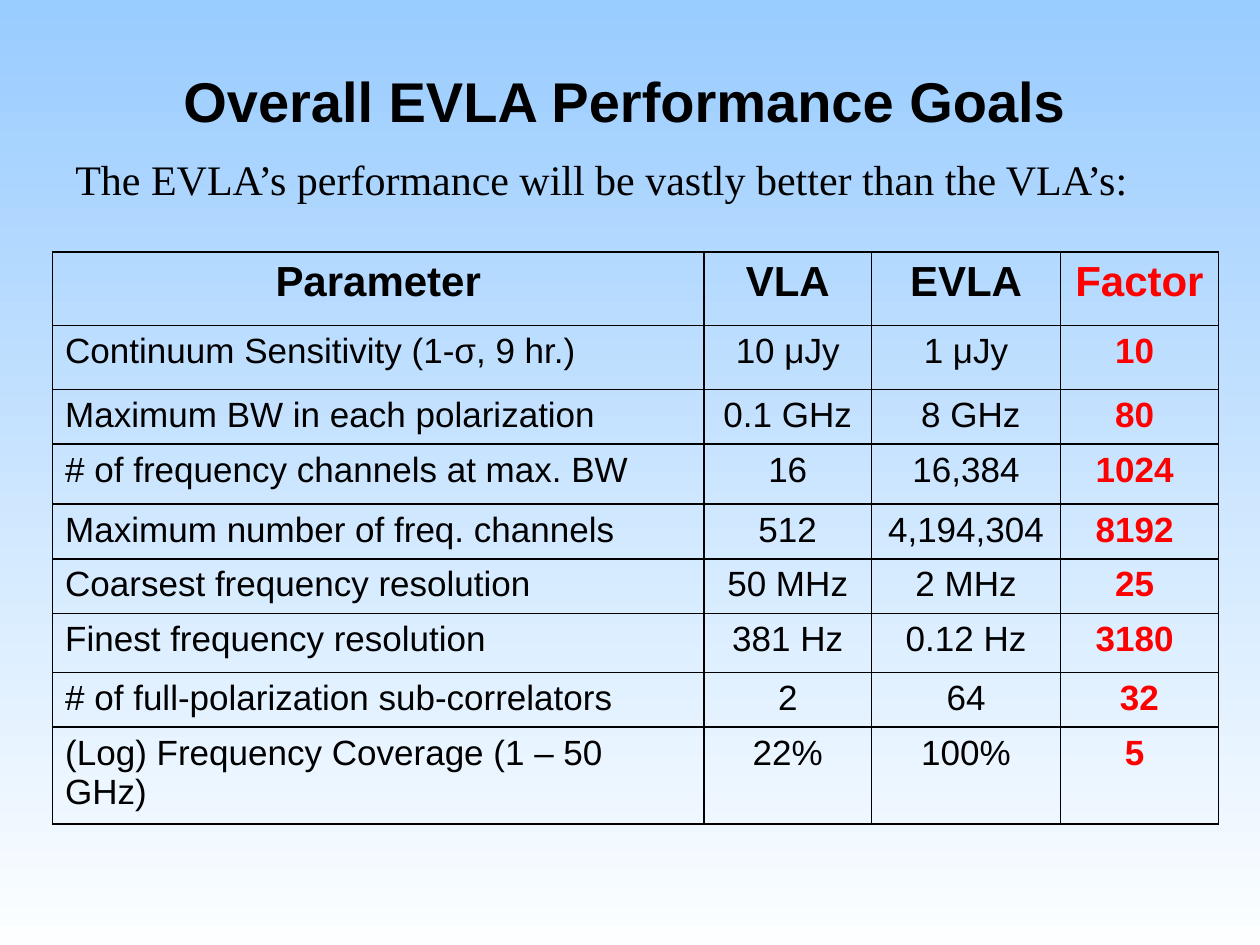
"""Build a slide with a table comparing VLA and EVLA performance."""
import lxml.etree
import pptx
import pptx.dml.color
import pptx.enum.text
import pptx.oxml.ns
import pptx.util

Cm = pptx.util.Cm
ALIGN = pptx.enum.text.PP_ALIGN
ANCHOR = pptx.enum.text.MSO_ANCHOR
BLACK = "000000"
RED = "FF0000"
COLUMN_WIDTHS = [13.13, 3.38, 3.81, 3.18]
ROW_HEIGHTS = [1.48, 1.29, 1.04, 1.21, 1.06, 1.03, 1.19, 1.06, 1.83]
ROWS = [
    ["Parameter", "VLA", "EVLA", "Factor"],
    ["Continuum Sensitivity (1-σ, 9 hr.)", "10 μJy", "1 μJy", "10 "],
    ["Maximum BW in each polarization", "0.1 GHz", " 8 GHz", "80 "],
    ["# of frequency channels at max. BW", "16", "16,384", "1024 "],
    ["Maximum number of freq. channels", "512", "4,194,304", "8192 "],
    ["Coarsest frequency resolution", "50 MHz", "2 MHz", "25 "],
    ["Finest frequency resolution", "381 Hz", "0.12 Hz", "3180 "],
    ["# of full-polarization sub-correlators", "2", "64", "32"],
    ["(Log) Frequency Coverage (1 – 50 GHz)", "22%", "100%", "5 "],
]


def color(value):
    return pptx.dml.color.RGBColor.from_string(value)


def write_text(frame, text, size=20, font="Arial", fill=BLACK, bold=False, align=ALIGN.LEFT):
    paragraph = frame.paragraphs[0]
    paragraph.alignment = align
    run = paragraph.add_run()
    run.text = text
    run.font.size = pptx.util.Pt(size)
    run.font.name = font
    run.font.bold = bold
    run.font.color.rgb = color(fill)


def add_text_box(slide, position, text, wrap=True, **text_format):
    frame = slide.shapes.add_textbox(*map(Cm, position)).text_frame
    frame.word_wrap = wrap
    frame.vertical_anchor = ANCHOR.MIDDLE
    write_text(frame, text, **text_format)


def add_borders(cell, fill=BLACK, width=1):
    properties = cell._tc.get_or_add_tcPr()
    qn = pptx.oxml.ns.qn
    for side in ("a:lnL", "a:lnR", "a:lnT", "a:lnB"):
        line = lxml.etree.SubElement(properties, qn(side), w=str(pptx.util.Pt(width)))
        solid = lxml.etree.SubElement(line, qn("a:solidFill"))
        lxml.etree.SubElement(solid, qn("a:srgbClr"), val=fill)


def add_performance_table(slide, left, top):
    shape = slide.shapes.add_table(
        len(ROWS), len(COLUMN_WIDTHS), Cm(left), Cm(top),
        Cm(sum(COLUMN_WIDTHS)), Cm(sum(ROW_HEIGHTS)))
    table = shape.table
    table.first_row = table.horz_banding = False
    for column, width in zip(table.columns, COLUMN_WIDTHS):
        column.width = Cm(width)
    for row, height in zip(table.rows, ROW_HEIGHTS):
        row.height = Cm(height)
    for row_index, values in enumerate(ROWS):
        header = row_index == 0
        for column_index, value in enumerate(values):
            cell = table.cell(row_index, column_index)
            factor = column_index == len(values) - 1
            add_borders(cell)
            cell.fill.background()
            write_text(
                cell.text_frame, value,
                size=24 if header else 20,
                fill=RED if factor else BLACK,
                bold=header or factor,
                align=ALIGN.CENTER if header or column_index else ALIGN.LEFT)


def set_gradient_background(slide, top, bottom):
    fill = slide.background.fill
    fill.gradient()
    fill.gradient_angle = 270
    for stop, value in zip(fill.gradient_stops, (top, bottom)):
        stop.color.rgb = color(value)


def main():
    presentation = pptx.Presentation()
    presentation.slide_width = Cm(25.4)
    presentation.slide_height = Cm(19.05)
    slide = presentation.slides.add_slide(presentation.slide_layouts[6])
    set_gradient_background(slide, "99CCFF", "FCFEFF")
    add_text_box(slide, (2.54, 0.85, 20.11, 2.33), "Overall EVLA Performance Goals",
                 size=32, bold=True, align=ALIGN.CENTER)
    add_performance_table(slide, 1.06, 5.08)
    add_text_box(slide, (1.27, 2.96, 22, 1.28),
                 "The EVLA’s performance will be vastly better than the VLA’s:",
                 wrap=False, size=24, font="Times New Roman")
    presentation.save("out.pptx")


if __name__ == "__main__":
    main()
